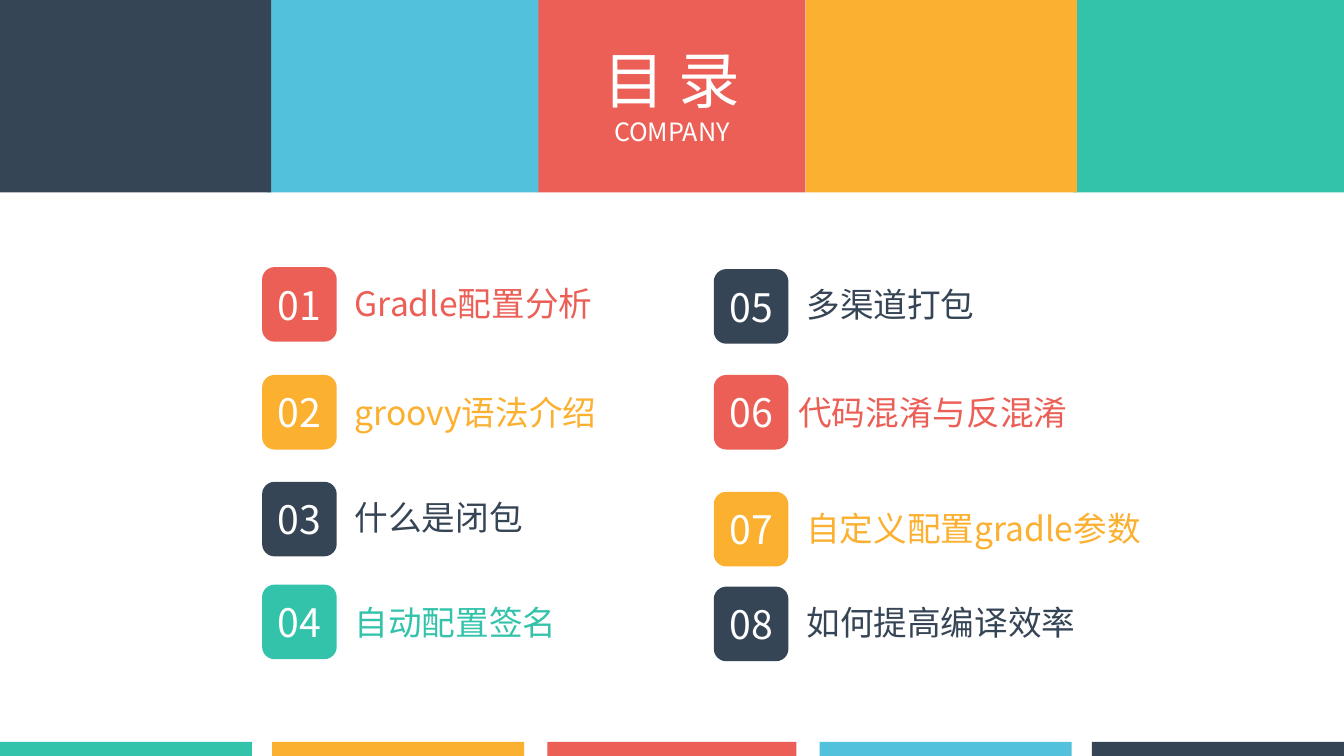
"""Build the table of contents slide."""
import pptx
import pptx.util
import pptx.dml.color
import pptx.enum.shapes
import pptx.enum.text
import pptx.oxml.ns
import lxml.etree

Inches = pptx.util.Inches
RGBColor = pptx.dml.color.RGBColor
SHAPE = pptx.enum.shapes.MSO_SHAPE
ALIGN = pptx.enum.text.PP_ALIGN

NAVY = RGBColor(0x36, 0x45, 0x55)
BLUE = RGBColor(0x52, 0xC2, 0xDC)
RED = RGBColor(0xEB, 0x5F, 0x56)
YELLOW = RGBColor(0xFC, 0xB0, 0x30)
GREEN = RGBColor(0x33, 0xC3, 0xAB)
WHITE = RGBColor(0xFF, 0xFF, 0xFF)

FONT = "Noto Sans CJK SC"
BADGE_SIZE = 0.74
LABEL_HEIGHT = 0.5

HEADER_BANDS = [
    (10.64, 2.69, GREEN),
    (7.99, 2.69, YELLOW),
    (5.33, 2.66, RED),
    (2.65, 2.69, BLUE),
    (0, 2.69, NAVY),
]
FOOTER_BANDS = [
    (0, 2.5, GREEN),
    (2.7, 2.5, YELLOW),
    (5.43, 2.47, RED),
    (8.13, 2.5, BLUE),
    (10.83, 2.5, NAVY),
]
# badge left, badge top, label left, label top, label width, wording, colour
ENTRIES = [
    (2.6, 2.65, 3.42, 2.76, 7.21, "Gradle配置分析", RED),
    (2.6, 3.72, 3.42, 3.84, 5.54, "groovy语法介绍", YELLOW),
    (2.6, 4.78, 3.42, 4.88, 5.02, "什么是闭包", NAVY),
    (2.6, 5.8, 3.42, 5.92, 5.19, "自动配置签名", GREEN),
    (7.08, 2.67, 7.9, 2.77, 5.02, "多渠道打包", NAVY),
    (7.08, 3.72, 7.82, 3.84, 5.4, "代码混淆与反混淆", RED),
    (7.08, 4.88, 7.9, 4.99, 5.54, "自定义配置gradle参数", YELLOW),
    (7.08, 5.82, 7.9, 5.92, 5.02, "如何提高编译效率", NAVY),
]


def write_para(para, wording, size, colour, align):
    """Fill a paragraph and set its Latin and East Asian font."""
    para.text = wording
    para.alignment = align
    para.font.size = pptx.util.Pt(size)
    para.font.color.rgb = colour
    para.font.name = FONT
    latin = para.font._element.find(pptx.oxml.ns.qn("a:latin"))
    east_asian = lxml.etree.Element(pptx.oxml.ns.qn("a:ea"), typeface=FONT)
    latin.addnext(east_asian)


def add_block(shapes, kind, left, top, width, height, colour):
    """Add a plain filled shape without outline or shadow."""
    block = shapes.add_shape(
        kind, Inches(left), Inches(top), Inches(width), Inches(height))
    block.shadow.inherit = False
    block.fill.solid()
    block.fill.fore_color.rgb = colour
    block.line.fill.background()
    return block


def add_bands(page, bands, top, height):
    """Add a row of coloured rectangles."""
    for left, width, colour in bands:
        add_block(page.shapes, SHAPE.RECTANGLE, left, top, width, height, colour)


def add_title(page):
    """Add the two-line heading."""
    box = page.shapes.add_textbox(
        Inches(5.85), Inches(0.37), Inches(1.63), Inches(1.18))
    frame = box.text_frame
    frame.word_wrap = False
    write_para(frame.paragraphs[0], "目 录", 44, WHITE, ALIGN.CENTER)
    write_para(frame.add_paragraph(), "COMPANY", 18, WHITE, ALIGN.CENTER)


def add_entry(page, number, entry):
    """Add a numbered badge grouped with its label."""
    badge_left, badge_top, left, top, width, wording, colour = entry
    shapes = page.shapes.add_group_shape().shapes
    badge = add_block(shapes, SHAPE.ROUNDED_RECTANGLE, badge_left, badge_top,
                      BADGE_SIZE, BADGE_SIZE, colour)
    badge.text_frame.vertical_anchor = pptx.enum.text.MSO_ANCHOR.MIDDLE
    write_para(badge.text_frame.paragraphs[0], f"{number:02}", 28, WHITE, ALIGN.CENTER)
    label = shapes.add_textbox(
        Inches(left), Inches(top), Inches(width), Inches(LABEL_HEIGHT))
    label.text_frame.word_wrap = True
    write_para(label.text_frame.paragraphs[0], wording, 24, colour, ALIGN.LEFT)


def main():
    """Assemble and save the deck."""
    deck = pptx.Presentation()
    deck.slide_width = Inches(13.33)
    deck.slide_height = Inches(7.5)
    page = deck.slides.add_slide(deck.slide_layouts[6])
    add_bands(page, HEADER_BANDS, 0, 1.91)
    add_title(page)
    add_bands(page, FOOTER_BANDS, 7.36, 0.14)
    for number, entry in enumerate(ENTRIES, 1):
        add_entry(page, number, entry)
    deck.save("out.pptx")


if __name__ == "__main__":
    main()
